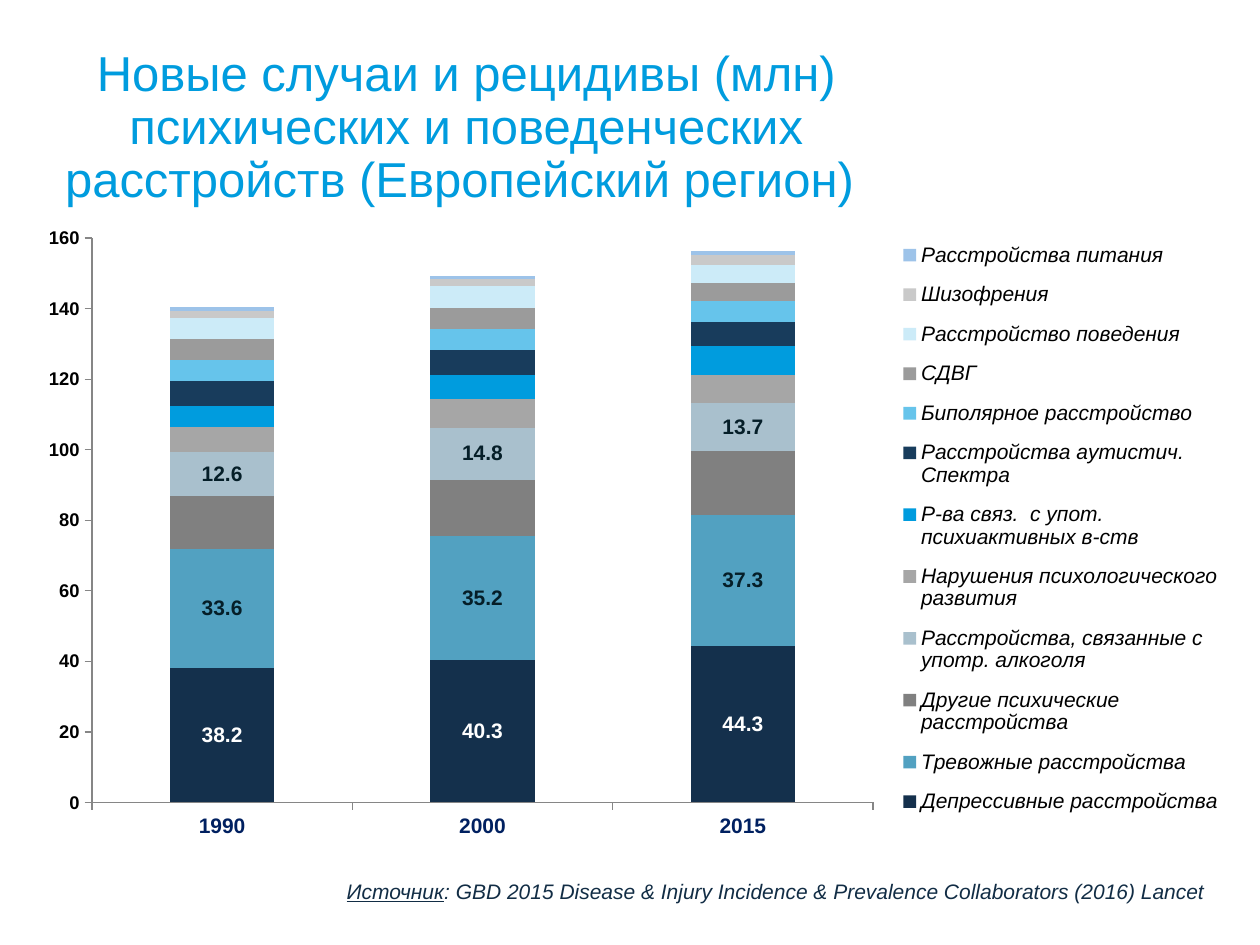
"""Build a slide with a stacked column chart of mental disorder cases."""
from typing import NamedTuple, Optional

from lxml import etree
from pptx import Presentation
from pptx.chart.data import CategoryChartData
from pptx.dml.color import RGBColor
from pptx.enum import chart as charts, text
from pptx.oxml import ns
from pptx.util import Inches, Pt

FONT = "Arial"
BLACK = RGBColor(0x00, 0x00, 0x00)
WHITE = RGBColor(0xFF, 0xFF, 0xFF)
TITLE_BLUE = RGBColor(0x00, 0x9C, 0xDE)
SOURCE_NAVY = RGBColor(0x12, 0x2D, 0x45)
CATEGORY_NAVY = RGBColor(0x00, 0x20, 0x60)
LABEL_DARK = RGBColor(0x05, 0x1E, 0x28)
AXIS_GRAY = RGBColor(0x86, 0x86, 0x86)
DEEP_NAVY = RGBColor(0x14, 0x30, 0x4C)
NAVY = RGBColor(0x18, 0x3C, 0x5C)
TEAL = RGBColor(0x52, 0xA1, 0xC1)
SKY = RGBColor(0x66, 0xC4, 0xEB)
DARK_GRAY = RGBColor(0x80, 0x80, 0x80)
GRAY = RGBColor(0x9B, 0x9B, 0x9B)
MID_GRAY = RGBColor(0xA6, 0xA6, 0xA6)
LIGHT_GRAY = RGBColor(0xC9, 0xC9, 0xC9)
BLUE_GRAY = RGBColor(0xA9, 0xC0, 0xCD)
PALE_BLUE = RGBColor(0xCC, 0xEB, 0xF8)
SOFT_BLUE = RGBColor(0x9D, 0xC3, 0xE9)

CHART_WIDTH, CHART_HEIGHT = Inches(9.61), Inches(5.05)


class Disorder(NamedTuple):
    name: str
    cases: tuple
    color: RGBColor
    label_color: Optional[RGBColor] = None


YEARS = ("1990", "2000", "2015")
DISORDERS = (
    Disorder("Депрессивные расстройства", (38.2, 40.3, 44.3), DEEP_NAVY, WHITE),
    Disorder("Тревожные расстройства", (33.6, 35.2, 37.3), TEAL, LABEL_DARK),
    Disorder("Другие психические расстройства", (15, 16, 18), DARK_GRAY),
    Disorder("Расстройства, связанные с употр. алкоголя", (12.6, 14.8, 13.7), BLUE_GRAY, LABEL_DARK),
    Disorder("Нарушения психологического развития", (7, 8, 8), MID_GRAY),
    Disorder("Р-ва связ.  с упот. психиактивных в-ств", (6, 7, 8), TITLE_BLUE),
    Disorder("Расстройства аутистич. Спектра", (7, 7, 7), NAVY),
    Disorder("Биполярное расстройство", (6, 6, 6), SKY),
    Disorder("СДВГ", (6, 6, 5), GRAY),
    Disorder("Расстройство поведения", (6, 6, 5), PALE_BLUE),
    Disorder("Шизофрения", (2, 2, 3), LIGHT_GRAY),
    Disorder("Расстройства питания", (1, 1, 1), SOFT_BLUE),
)


def style_font(font, size: float, color: RGBColor, bold: bool = False, italic: bool = False) -> None:
    """Apply the slide typeface with the given look."""
    font.name = FONT
    font.size = Pt(size)
    font.color.rgb = color
    font.bold = bold
    font.italic = italic


def add_title(slide) -> None:
    """Fill and place the title placeholder."""
    title = slide.shapes.title
    title.left, title.top = Inches(0.3), Inches(0.21)
    title.width, title.height = Inches(7.17), Inches(1.44)
    frame = title.text_frame
    frame.text = "Новые случаи и рецидивы (млн) психических и поведенческих расстройств (Европейский регион) "
    frame.auto_size = text.MSO_AUTO_SIZE.NONE
    frame.vertical_anchor = text.MSO_ANCHOR.BOTTOM
    frame.margin_left, frame.margin_right = Inches(0.02), Inches(0.39)
    frame.margin_top = frame.margin_bottom = 0
    paragraph = frame.paragraphs[0]
    paragraph.alignment = text.PP_ALIGN.CENTER
    paragraph.line_spacing = 0.9
    style_font(paragraph.runs[0].font, 28, TITLE_BLUE)


def set_layout(element, left: int, top: int, width: int, height: int, inner: bool = False) -> None:
    """Place a chart part by lengths measured from the chart corner."""
    for old in element.findall(ns.qn("c:layout")):
        element.remove(old)
    layout = etree.Element(ns.qn("c:layout"))
    manual = etree.SubElement(layout, ns.qn("c:manualLayout"))
    settings = [("layoutTarget", "inner")] if inner else []
    settings += [
        ("xMode", "edge"), ("yMode", "edge"),
        ("x", left / CHART_WIDTH), ("y", top / CHART_HEIGHT),
        ("w", width / CHART_WIDTH), ("h", height / CHART_HEIGHT),
    ]
    for tag, value in settings:
        etree.SubElement(manual, ns.qn(f"c:{tag}")).set("val", str(value))
    position = element.find(ns.qn("c:legendPos"))
    if position is None:
        element.insert(0, layout)
    else:
        position.addnext(layout)


def style_axis(axis, size: float, color: RGBColor) -> None:
    """Give an axis a thin gray line and bold labels."""
    axis.has_major_gridlines = False
    axis.major_tick_mark = charts.XL_TICK_MARK.OUTSIDE
    axis.minor_tick_mark = charts.XL_TICK_MARK.NONE
    axis.format.line.color.rgb = AXIS_GRAY
    axis.format.line.width = Pt(0.75)
    style_font(axis.tick_labels.font, size, color, bold=True)


def style_series(series, disorder: Disorder) -> None:
    """Colour a series and show its values where wanted."""
    series.format.fill.solid()
    series.format.fill.fore_color.rgb = disorder.color
    series.invert_if_negative = False
    if disorder.label_color is not None:
        labels = series.data_labels
        labels.show_value = True
        labels.number_format = "0.0"
        labels.number_format_is_linked = False
        labels.position = charts.XL_LABEL_POSITION.CENTER
        style_font(labels.font, 12, disorder.label_color, bold=True)


def add_disorder_chart(slide) -> None:
    """Add the stacked columns with axes and legend."""
    data = CategoryChartData(number_format="0.0")
    data.categories = YEARS
    for disorder in DISORDERS:
        data.add_series(disorder.name, disorder.cases)
    chart = slide.shapes.add_chart(
        charts.XL_CHART_TYPE.COLUMN_STACKED,
        Inches(0.2), Inches(1.7), CHART_WIDTH, CHART_HEIGHT, data,
    ).chart
    style_font(chart.font, 10, BLACK)
    chart.has_title = False
    plot = chart.plots[0]
    plot.gap_width, plot.overlap = 150, 100
    plot.vary_by_categories = False
    for series, disorder in zip(plot.series, DISORDERS):
        style_series(series, disorder)
    style_axis(chart.category_axis, 12, CATEGORY_NAVY)
    value_axis = chart.value_axis
    style_axis(value_axis, 10.5, BLACK)
    value_axis.minimum_scale, value_axis.maximum_scale, value_axis.major_unit = 0, 160, 20
    value_axis.tick_labels.number_format = "0"
    value_axis.tick_labels.number_format_is_linked = False
    chart.has_legend = True
    legend = chart.legend
    legend.position = charts.XL_LEGEND_POSITION.RIGHT
    legend.include_in_layout = False
    style_font(legend.font, 12, BLACK, italic=True)
    plot_area = chart.element.find(f".//{ns.qn('c:plotArea')}")
    set_layout(plot_area, Inches(0.53), Inches(0.19), Inches(6.2), Inches(4.48), inner=True)
    legend_element = chart.element.find(f".//{ns.qn('c:legend')}")
    set_layout(legend_element, Inches(6.87), Inches(0.1), Inches(2.7), Inches(4.79))


def add_source(slide) -> None:
    """Add the right-aligned source line."""
    box = slide.shapes.add_textbox(Inches(0.3), Inches(6.92), Inches(9.41), Inches(0.3))
    frame = box.text_frame
    frame.word_wrap = True
    frame.auto_size = text.MSO_AUTO_SIZE.SHAPE_TO_FIT_TEXT
    paragraph = frame.paragraphs[0]
    paragraph.alignment = text.PP_ALIGN.RIGHT
    citation = ": GBD 2015 Disease & Injury Incidence & Prevalence Collaborators (2016) Lancet "
    for words, underlined in (("Источник", True), (citation, False)):
        run = paragraph.add_run()
        run.text = words
        style_font(run.font, 12, SOURCE_NAVY, italic=True)
        run.font.underline = underlined


def main() -> None:
    """Assemble and save the presentation."""
    presentation = Presentation()
    presentation.slide_width, presentation.slide_height = Inches(10), Inches(7.5)
    slide = presentation.slides.add_slide(presentation.slide_layouts[5])
    add_title(slide)
    add_disorder_chart(slide)
    add_source(slide)
    presentation.save("out.pptx")


if __name__ == "__main__":
    main()
